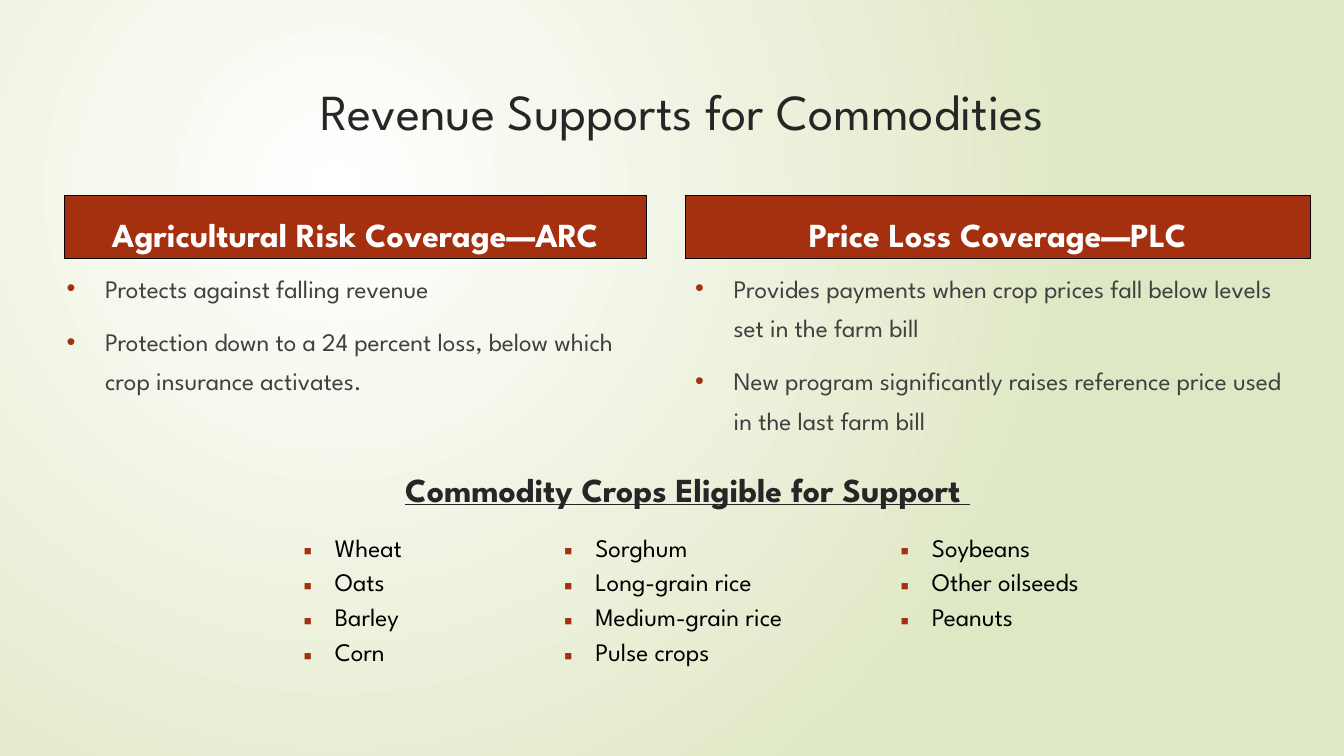
import pptx
import pptx.util
import pptx.dml.color
import pptx.enum.shapes
import pptx.enum.text
from lxml import etree
from pptx.oxml.ns import qn
from pptx.util import Pt

ALIGN = pptx.enum.text.PP_ALIGN
ANCHOR = pptx.enum.text.MSO_ANCHOR


class Theme:
    font = "League Spartan"
    white, pale_green = "FFFFFF", "DFE8C4"
    rust, black = "A53010", "000000"
    heading, body = "262626", "404040"
    title_size, heading_size, body_size = 36, 24, 18
    plain_table = "{2D5ABB26-0587-4C30-8999-92F81FD0307C}"


PROGRAMS = [
    # header left, header width, list left, list width, header, points
    (46, 415.5, 40.5, 415.5, "Agricultural Risk Coverage—ARC", [
        "Protects against falling revenue",
        "Protection down to a 24 percent loss, below which crop insurance activates.",
    ]),
    (489.5, 446.5, 489.5, 448.5, "Price Loss Coverage—PLC", [
        "Provides payments when crop prices fall below levels set in the farm bill",
        "New program significantly raises reference price used in the last farm bill",
    ]),
]
CROPS = [
    (186, ["Wheat", "Oats", "Barley", "Corn"]),
    (240.5, ["Sorghum", "Long-grain rice", "Medium-grain rice", "Pulse crops"]),
    (213.5, ["Soybeans", "Other oilseeds", "Peanuts"]),
]


def rgb(color):
    return pptx.dml.color.RGBColor.from_string(color)


def apply(target, values):
    for name, value in values.items():
        setattr(target, name, value)


def add_bullet(para, symbol, indent):
    properties = para._p.get_or_add_pPr()
    properties.set("marL", str(Pt(indent)))
    properties.set("indent", str(-Pt(indent)))
    color = etree.SubElement(properties, qn("a:buClr"))
    etree.SubElement(color, qn("a:srgbClr"), val=Theme.rust)
    etree.SubElement(properties, qn("a:buFont"), typeface="Arial")
    etree.SubElement(properties, qn("a:buChar"), char=symbol)


def write(frame, lines, size, color, font=None, layout=None, bullet=None):
    for index, line in enumerate(lines):
        para = frame.paragraphs[0] if index == 0 else frame.add_paragraph()
        apply(para, layout or {})
        if bullet:
            add_bullet(para, *bullet)
        span = para.add_run()
        span.text = line
        apply(span.font, {"name": Theme.font, "size": Pt(size), **(font or {})})
        span.font.color.rgb = rgb(color)


def add_text(page, place, lines, size, color, anchor=ANCHOR.TOP, **style):
    box = page.shapes.add_textbox(*map(Pt, place))
    apply(box.text_frame, {"word_wrap": True, "vertical_anchor": anchor})
    write(box.text_frame, lines, size, color, **style)


def add_header(page, place, text):
    bar = page.shapes.add_shape(
        pptx.enum.shapes.MSO_SHAPE.RECTANGLE, *map(Pt, place))
    bar.shadow.inherit = False
    bar.fill.solid()
    bar.fill.fore_color.rgb = rgb(Theme.rust)
    bar.line.color.rgb = rgb(Theme.black)
    bar.line.width = Pt(0.75)
    apply(bar.text_frame, {"word_wrap": True, "vertical_anchor": ANCHOR.BOTTOM})
    write(bar.text_frame, [text], Theme.heading_size, Theme.white,
          font={"bold": True}, layout={"alignment": ALIGN.CENTER})


def add_crop_table(page, left, top, height):
    width = sum(column_width for column_width, _ in CROPS)
    table = page.shapes.add_table(
        1, len(CROPS), *map(Pt, (left, top, width, height))).table
    apply(table, {"first_row": False, "horz_banding": False})
    table._tbl.tblPr.find(qn("a:tableStyleId")).text = Theme.plain_table
    for index, (column_width, crops) in enumerate(CROPS):
        table.columns[index].width = Pt(column_width)
        cell = table.cell(0, index)
        cell.fill.background()
        write(cell.text_frame, crops, Theme.body_size, Theme.black,
              layout={"line_spacing": 1.5}, bullet=("▪", 22.5))


def paint_background(page):
    fill = page.background.fill
    fill.gradient()
    for stop, color in zip(fill.gradient_stops, (Theme.white, Theme.pale_green)):
        stop.color.rgb = rgb(color)
    # Turn the linear gradient into a circular one
    linear = page.background._cSld.find(".//" + qn("a:lin"))
    circle = etree.Element(qn("a:path"), {"path": "circle"})
    etree.SubElement(circle, qn("a:fillToRect"),
                     l="50000", t="50000", r="100000", b="100000")
    linear.getparent().replace(linear, circle)


def main():
    deck = pptx.Presentation()
    apply(deck, {"slide_width": Pt(960), "slide_height": Pt(540)})
    page = deck.slides.add_slide(deck.slide_layouts[6])
    paint_background(page)
    centered = {"alignment": ALIGN.CENTER}

    # Title
    add_text(page, (46, 49, 882.5, 59), ["Revenue Supports for Commodities"],
             Theme.title_size, Theme.heading, ANCHOR.MIDDLE, layout=centered)

    # The two programs
    for bar_left, bar_width, left, width, header, points in PROGRAMS:
        add_header(page, (bar_left, 139.5, bar_width, 45.5), header)
        add_text(page, (left, 185, width, 108.5), points,
                 Theme.body_size, Theme.body, bullet=("•", 27.5),
                 layout={"space_before": Pt(10), "line_spacing": 1.3})

    # Eligible crops
    add_text(page, (46, 327.5, 890, 44), ["Commodity Crops Eligible for Support "],
             Theme.heading_size, Theme.heading, ANCHOR.MIDDLE,
             font={"bold": True, "underline": True}, layout=centered)
    add_crop_table(page, 209.5, 373.5, 146)

    deck.save("out.pptx")


if __name__ == "__main__":
    main()
